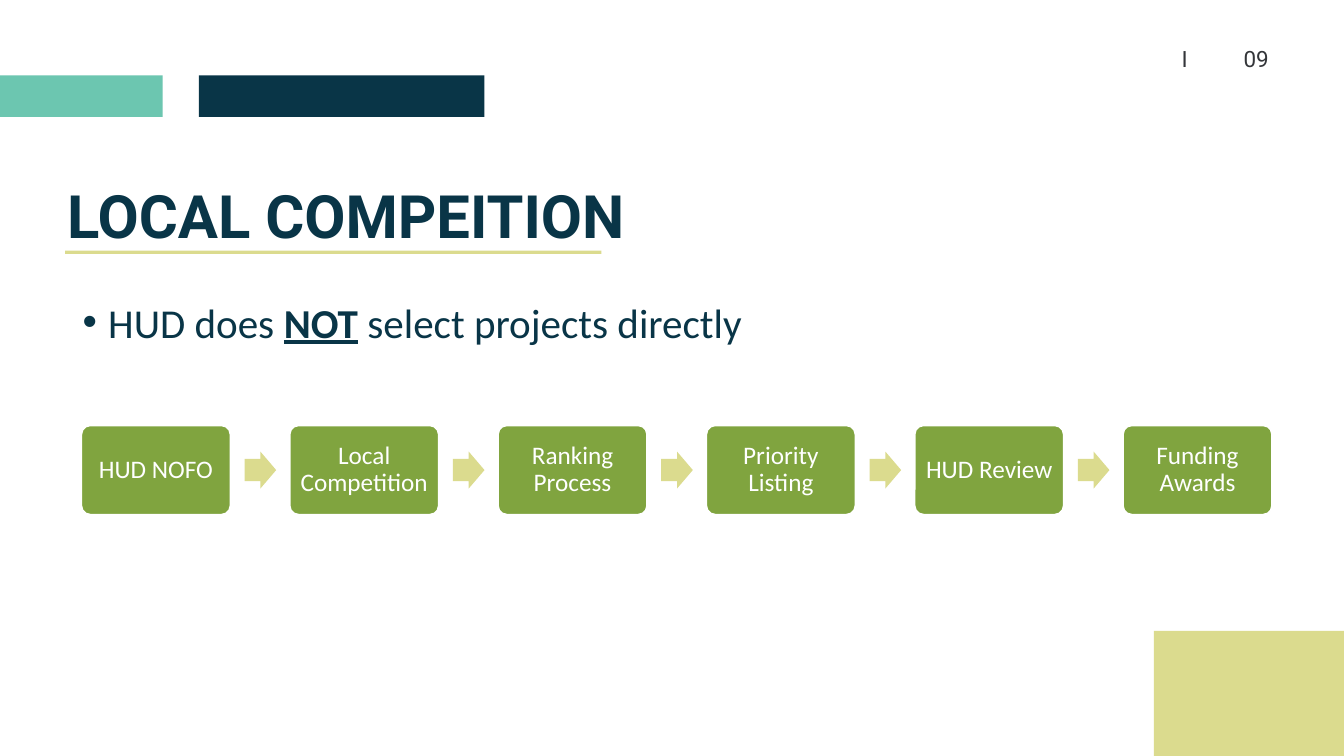
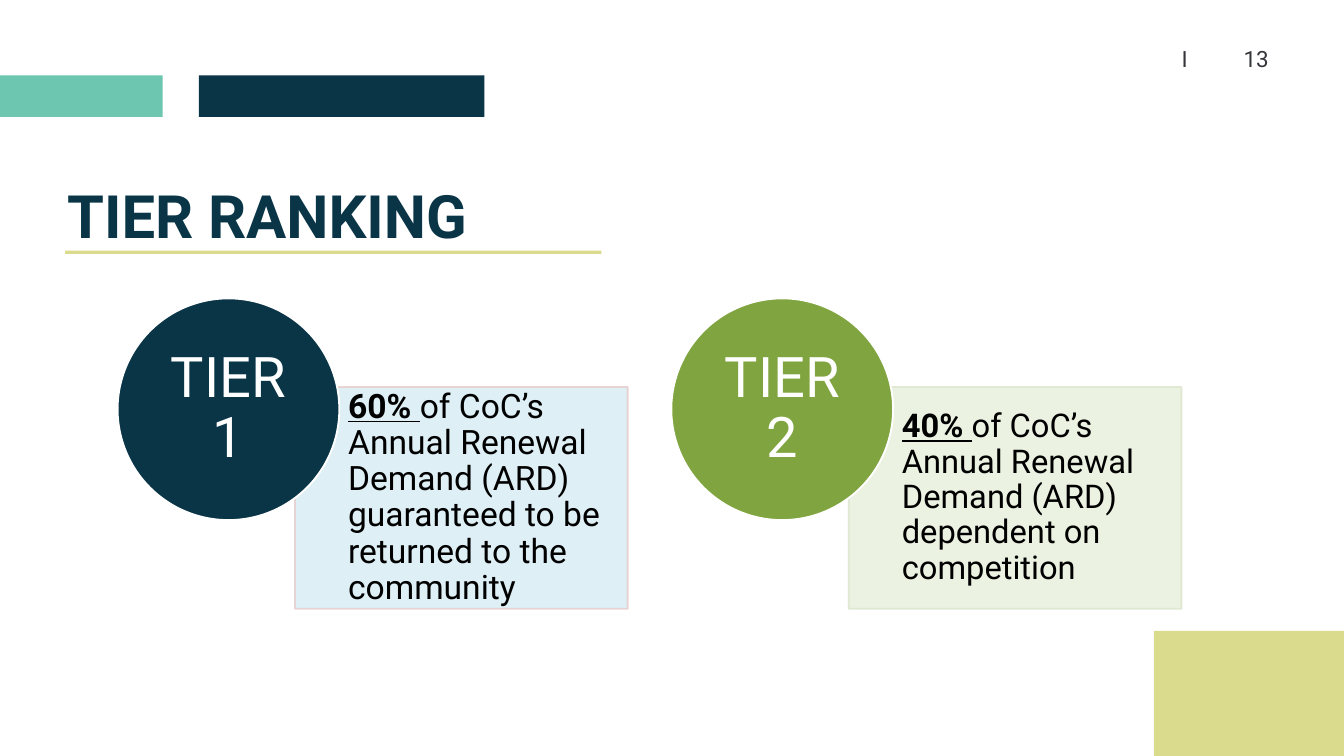
from lxml import etree
from pptx import Presentation
from pptx.dml.color import RGBColor
from pptx.enum.shapes import MSO_SHAPE as Preset
from pptx.enum.text import MSO_ANCHOR as Anchor, MSO_AUTO_SIZE as AutoSize, PP_ALIGN as Align
from pptx.oxml.ns import qn
from pptx.util import Inches, Pt

NAVY = RGBColor(0x09, 0x35, 0x47)
TEAL = RGBColor(0x6C, 0xC6, 0xB0)
LIME = RGBColor(0xDB, 0xDB, 0x8E)
GREEN = RGBColor(0x80, 0xA4, 0x3F)
GRAY = RGBColor(0x34, 0x36, 0x3A)
WHITE = RGBColor(0xFF, 0xFF, 0xFF)
BLACK = RGBColor(0x00, 0x00, 0x00)
PALE_BLUE = RGBColor(0xDB, 0xEE, 0xF4)
PALE_PINK = RGBColor(0xE8, 0xD0, 0xD0)
PALE_GREEN = RGBColor(0xEB, 0xF1, 0xDE)
SAGE = RGBColor(0xDE, 0xE7, 0xD1)

HEADING_FONT = "Roboto"
BODY_FONT = "Calibri"


def add_block(slide, preset, box, fill, outline=None):
    """Add a flat preset shape; box is left, top, width, height in inches."""
    block = slide.shapes.add_shape(preset, *map(Inches, box))
    block.shadow.inherit = False
    block.fill.solid()
    block.fill.fore_color.rgb = fill
    if outline is None:
        block.line.fill.background()
    else:
        block.line.color.rgb = outline
        block.line.width = Pt(2)
    return block


def set_text(frame, runs, font_name, size, color, align=Align.LEFT, margins=(0, 0, 0, 0)):
    """Write one paragraph of (text, emphasised) runs; margins are left, top, right, bottom."""
    frame.word_wrap = True
    frame.auto_size = AutoSize.NONE
    (frame.margin_left, frame.margin_top,
     frame.margin_right, frame.margin_bottom) = map(Inches, margins)
    paragraph = frame.paragraphs[0]
    paragraph.alignment = align
    paragraph.space_before = Pt(0)
    font = paragraph.font
    font.name, font.size, font.color.rgb = font_name, Pt(size), color
    for text, emphasised in runs:
        run = paragraph.add_run()
        run.text = text
        if emphasised:
            run.font.bold = run.font.underline = True
    return paragraph


prs = Presentation()
prs.slide_width, prs.slide_height = Inches(20), Inches(11.25)
title_and_content, title_only = prs.slide_layouts[1], prs.slide_layouts[5]
competition = prs.slides.add_slide(title_and_content)
ranking = prs.slides.add_slide(title_only)

# Bands, title and page number shared by both slides
for slide, heading, page in ((competition, "LOCAL COMPEITION", "09"),
                             (ranking, "TIER RANKING", "13")):
    for box, color in (((17.17, 9.39, 2.83, 1.86), LIME),
                       ((0.97, 3.73, 7.98, 0.05), LIME),
                       ((2.96, 1.12, 4.25, 0.62), NAVY),
                       ((0, 1.12, 2.42, 0.62), TEAL)):
        add_block(slide, Preset.RECTANGLE, box, color)

    title = slide.shapes.title
    title.left, title.top, title.width, title.height = map(Inches, (1, 2.62, 16.71, 1.08))
    title.text_frame.vertical_anchor = Anchor.TOP
    paragraph = set_text(title.text_frame, [(heading, False)], HEADING_FONT, 64, NAVY)
    paragraph.line_spacing = Pt(79.3)
    paragraph.font.bold = True

    page_number = slide.shapes.add_textbox(*map(Inches, (15.54, 0.6, 3.34, 0.45)))
    paragraph = page_number.text_frame.paragraphs[0]
    tabs = etree.SubElement(paragraph._p.get_or_add_pPr(), qn("a:tabLst"))
    etree.SubElement(tabs, qn("a:tab"), pos=str(Inches(0.92)), algn="l")
    set_text(page_number.text_frame, [("I\t" + page, False)], HEADING_FONT, 24, GRAY, Align.RIGHT)
    paragraph.line_spacing = Pt(33.6)

# Local competition: statement and process steps
statement = competition.placeholders[1]
statement.left, statement.top, statement.width, statement.height = map(
    Inches, (1.13, 4.37, 15.03, 1.2))
bullet_props = statement.text_frame.paragraphs[0]._p.get_or_add_pPr()
bullet_props.set("marL", str(Inches(0.38)))
bullet_props.set("indent", str(-Inches(0.38)))
etree.SubElement(bullet_props, qn("a:buFont"), typeface="Arial")
etree.SubElement(bullet_props, qn("a:buChar"), char="•")
set_text(statement.text_frame,
         [("HUD does ", False), ("NOT", True), (" select projects directly", False)],
         BODY_FONT, 44, NAVY, margins=(0.1, 0.05, 0.1, 0.05))

STEPS = ("HUD NOFO", "Local Competition", "Ranking Process",
         "Priority Listing", "HUD Review", "Funding Awards")
STEP_PITCH = 3.1
for index, step in enumerate(STEPS):
    left = 1.21 + index * STEP_PITCH
    card = add_block(competition, Preset.ROUNDED_RECTANGLE, (left, 6.33, 2.22, 1.33), GREEN, WHITE)
    card.adjustments[0] = 0.1
    card.text_frame.vertical_anchor = Anchor.MIDDLE
    paragraph = set_text(card.text_frame, [(step, False)], BODY_FONT, 27, WHITE,
                         Align.CENTER, (0.11, 0.11, 0.11, 0.11))
    paragraph.line_spacing = 0.9
    if index < len(STEPS) - 1:
        arrow = add_block(competition, Preset.RIGHT_ARROW, (left + 2.43, 6.72, 0.47, 0.55), LIME)
        arrow.adjustments[0], arrow.adjustments[1] = 0.6, 0.5

# Tier ranking: a circle overlapping its description
TIERS = (
    ("TIER 1", 1.75, NAVY, PALE_BLUE, PALE_PINK, 36, "60% ",
     "of CoC’s Annual Renewal Demand (ARD) guaranteed to be returned to the community"),
    ("TIER 2", 9.99, GREEN, PALE_GREEN, SAGE, 35, "40% ",
     "of CoC’s Annual Renewal Demand (ARD) dependent on competition"),
)
for tier, left, color, panel_fill, panel_outline, size, share, meaning in TIERS:
    panel = add_block(ranking, Preset.RECTANGLE, (left + 2.64, 5.76, 4.95, 3.3),
                      panel_fill, panel_outline)
    for panel_color in panel._element.spPr.iter(qn("a:srgbClr")):
        etree.SubElement(panel_color, qn("a:alpha"), val="90000")
    panel.text_frame.vertical_anchor = Anchor.MIDDLE
    paragraph = set_text(panel.text_frame, [(share, True), (meaning, False)], HEADING_FONT,
                         size, BLACK, margins=(0.79, 0.28, 0.28, 0.28))
    paragraph.line_spacing = 0.9

    circle = add_block(ranking, Preset.OVAL, (left, 4.44, 3.3, 3.3), color, WHITE)
    circle.text_frame.vertical_anchor = Anchor.MIDDLE
    paragraph = set_text(circle.text_frame, [(tier, False)], HEADING_FONT, 60, WHITE,
                         Align.CENTER, (0.05, 0, 0.05, 0))
    paragraph.line_spacing = 0.9

prs.save("out.pptx")
